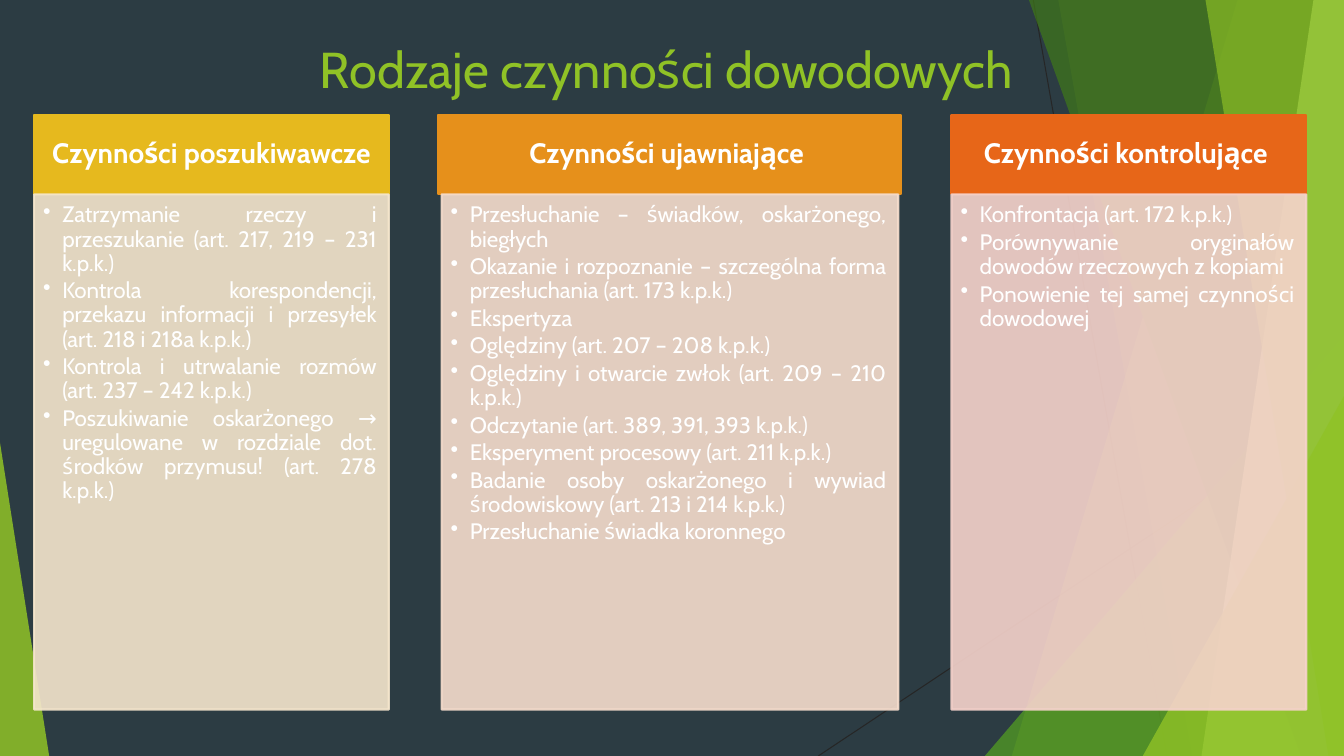
"""Build a slide that lists three kinds of evidentiary activities."""
from lxml import etree
from pptx import Presentation
from pptx import util as u
from pptx.dml.color import RGBColor
from pptx.enum import shapes, text
from pptx.oxml.ns import qn

FONT = "Cabin"
WIDTH, HEIGHT = u.Cm(33.87), u.Cm(19.05)
HEADER_TOP, HEADER_HEIGHT = u.Cm(2.9), u.Cm(2)
BODY_TOP, BODY_HEIGHT = u.Cm(4.9), u.Cm(12.98)

BACKGROUND = RGBColor(0x2C, 0x3C, 0x43)
WHITE = RGBColor(0xFF, 0xFF, 0xFF)
THREAD = RGBColor(0x26, 0x26, 0x26)
LIME = RGBColor(0x90, 0xC2, 0x26)
GREEN = RGBColor(0x54, 0xA0, 0x21)
FOREST = RGBColor(0x3F, 0x78, 0x19)
PALE_LIME = RGBColor(0xC0, 0xE4, 0x74)
GOLD = RGBColor(0xE6, 0xB9, 0x1E)
PALE_GOLD = RGBColor(0xF5, 0xE6, 0xCD)
AMBER = RGBColor(0xE6, 0x90, 0x1B)
PALE_AMBER = RGBColor(0xF6, 0xDD, 0xCD)
ORANGE = RGBColor(0xE7, 0x66, 0x18)
PALE_ORANGE = RGBColor(0xF6, 0xD3, 0xCC)

SEARCH = [
    "Zatrzymanie rzeczy i przeszukanie (art. 217, 219 – 231 k.p.k.)",
    "Kontrola korespondencji, przekazu informacji i przesyłek (art. 218 i 218a k.p.k.)",
    "Kontrola i utrwalanie rozmów (art. 237 – 242 k.p.k.)",
    "Poszukiwanie oskarżonego → uregulowane w rozdziale dot. środków przymusu! "
    "(art. 278 k.p.k.)",
]
DISCLOSURE = [
    "Przesłuchanie – świadków, oskarżonego, biegłych ",
    "Okazanie i rozpoznanie – szczególna forma przesłuchania (art. 173 k.p.k.)",
    "Ekspertyza ",
    "Oględziny (art. 207 – 208 k.p.k.)",
    "Oględziny i otwarcie zwłok (art. 209 – 210 k.p.k.) ",
    "Odczytanie (art. 389, 391, 393 k.p.k.)",
    "Eksperyment procesowy (art. 211 k.p.k.)",
    "Badanie osoby oskarżonego i wywiad środowiskowy (art. 213 i 214 k.p.k.)",
    "Przesłuchanie świadka koronnego ",
]
CONTROL = [
    "Konfrontacja (art. 172 k.p.k.) ",
    "Porównywanie oryginałów dowodów rzeczowych z kopiami ",
    "Ponowienie tej samej czynności dowodowej ",
]


def set_opacity(shape, percent):
    for color in shape._element.spPr.iter(qn("a:srgbClr")):
        etree.SubElement(color, qn("a:alpha")).set("val", str(percent * 1000))


def paint(shape, color, opacity=100, outlined=False):
    shape.shadow.inherit = False
    shape.fill.solid()
    shape.fill.fore_color.rgb = color
    if outlined:
        shape.line.color.rgb = color
        shape.line.width = u.Pt(1.5)
    else:
        shape.line.fill.background()
    if opacity < 100:
        set_opacity(shape, opacity)


def add_thread(page, x1, y1, x2, y2):
    thread = page.shapes.add_connector(
        shapes.MSO_CONNECTOR.STRAIGHT, u.Cm(x1), u.Cm(y1), u.Cm(x2), u.Cm(y2))
    thread.line.color.rgb = THREAD
    thread.line.width = u.Pt(0.75)
    etree.SubElement(thread._element.spPr, qn("a:effectLst"))


def add_band(page, top_x, bottom_x, color, opacity):
    builder = page.shapes.build_freeform(u.Cm(top_x), 0)
    builder.add_line_segments([(WIDTH, 0), (WIDTH, HEIGHT), (u.Cm(bottom_x), HEIGHT)])
    paint(builder.convert_to_shape(), color, opacity)


def add_corner(page, left, top, width, apex, color, opacity):
    corner = page.shapes.add_shape(
        shapes.MSO_SHAPE.ISOSCELES_TRIANGLE,
        u.Cm(left), u.Cm(top), u.Cm(width), HEIGHT - u.Cm(top))
    corner.adjustments[0] = apex
    paint(corner, color, opacity)


def add_backdrop(page):
    add_thread(page, 26.04, 0, 29.41, 19.05)
    add_thread(page, 33.87, 10.24, 20.62, 19.05)
    add_band(page, 31.19, 25.5, LIME, 30)
    add_band(page, 26.67, 30.05, LIME, 20)
    add_corner(page, 24.82, 8.46, 9.05, 1, GREEN, 72)
    add_band(page, 25.93, 32.79, FOREST, 70)
    add_band(page, 33.1, 30.28, PALE_LIME, 70)
    add_band(page, 30.38, 33.48, LIME, 65)
    add_corner(page, 28.8, 9.98, 5.07, 1, LIME, 80)
    add_corner(page, 0, 11.15, 1.24, 0, LIME, 85)


def set_margins(frame, left, top, right, bottom):
    frame.word_wrap = True
    frame.margin_left, frame.margin_top = u.Cm(left), u.Cm(top)
    frame.margin_right, frame.margin_bottom = u.Cm(right), u.Cm(bottom)


def set_font(para, size, color, bold=False):
    para.font.name = FONT
    para.font.size = u.Pt(size)
    para.font.color.rgb = color
    para.font.bold = bold


def add_bullet(para):
    props = para._p.get_or_add_pPr()
    props.set("marL", str(u.Cm(0.48)))
    props.set("indent", str(-u.Cm(0.48)))
    etree.SubElement(props, qn("a:buChar")).set("char", "•")


def add_title(page, wording):
    title = page.shapes.title
    title.left, title.top, title.width, title.height = 0, u.Cm(0.84), WIDTH, u.Cm(4.04)
    title.text_frame.vertical_anchor = text.MSO_ANCHOR.TOP
    title.text_frame.text = wording
    para = title.text_frame.paragraphs[0]
    para.alignment = text.PP_ALIGN.CENTER
    set_font(para, 36, LIME)


def add_header(page, left, width, heading, color):
    box = page.shapes.add_shape(
        shapes.MSO_SHAPE.RECTANGLE, u.Cm(left), HEADER_TOP, u.Cm(width), HEADER_HEIGHT)
    paint(box, color, outlined=True)
    set_margins(box.text_frame, 0.41, 0.23, 0.41, 0.23)
    box.text_frame.vertical_anchor = text.MSO_ANCHOR.MIDDLE
    box.text_frame.text = heading
    para = box.text_frame.paragraphs[0]
    para.alignment = text.PP_ALIGN.CENTER
    para.line_spacing = 0.9
    set_font(para, 20, WHITE, bold=True)


def add_list(page, left, width, items, color):
    box = page.shapes.add_shape(
        shapes.MSO_SHAPE.RECTANGLE, u.Cm(left), BODY_TOP, u.Cm(width), BODY_HEIGHT)
    paint(box, color, 90, outlined=True)
    frame = box.text_frame
    set_margins(frame, 0.23, 0.23, 0.3, 0.36)
    frame.vertical_anchor = text.MSO_ANCHOR.TOP
    frame.text = "\n".join(items)
    for para in frame.paragraphs:
        para.alignment = text.PP_ALIGN.JUSTIFY
        para.line_spacing = 0.9
        para.space_after = u.Pt(2.4)
        add_bullet(para)
        set_font(para, 16, WHITE)


def main():
    deck = Presentation()
    deck.slide_width, deck.slide_height = WIDTH, HEIGHT
    page = deck.slides.add_slide(deck.slide_layouts[5])
    page.background.fill.solid()
    page.background.fill.fore_color.rgb = BACKGROUND
    add_backdrop(page)
    add_title(page, "Rodzaje czynności dowodowych ")
    add_header(page, 0.86, 8.94, "Czynności poszukiwawcze ", GOLD)
    add_list(page, 0.86, 8.94, SEARCH, PALE_GOLD)
    add_header(page, 11.05, 11.66, "Czynności ujawniające ", AMBER)
    add_list(page, 11.13, 11.51, DISCLOSURE, PALE_AMBER)
    add_header(page, 23.98, 8.94, "Czynności kontrolujące ", ORANGE)
    add_list(page, 23.98, 8.94, CONTROL, PALE_ORANGE)
    deck.save("out.pptx")


if __name__ == "__main__":
    main()
